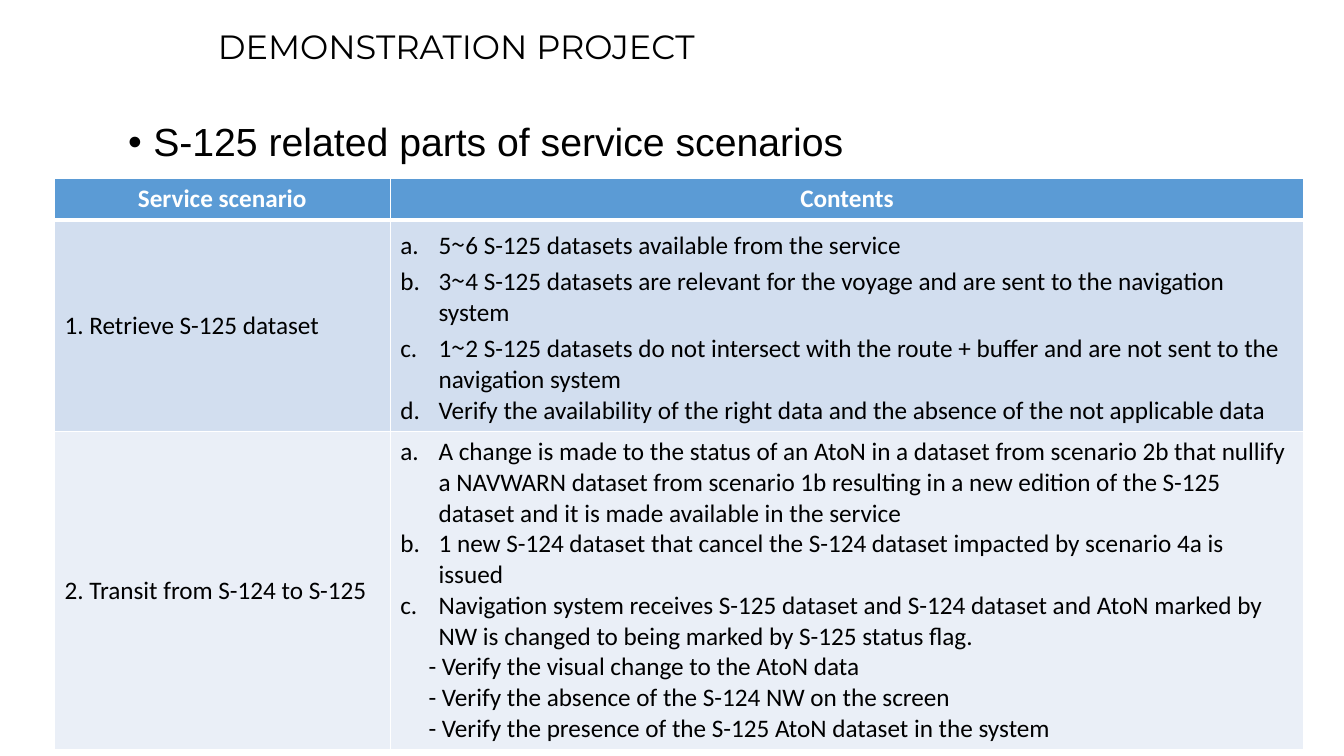
from dataclasses import dataclass

from lxml.etree import SubElement
from pptx import Presentation
from pptx.dml.color import RGBColor as RGB
from pptx.enum.text import MSO_ANCHOR as Anchor, MSO_AUTO_SIZE as Fit, PP_ALIGN as Align
from pptx.oxml.ns import qn
from pptx.util import Inches, Pt


@dataclass(frozen=True)
class Theme:
    black: str = "000000"
    white: str = "FFFFFF"
    head: str = "5B9BD5"
    bands: tuple = ("D2DEEF", "EAEFF7")
    title: int = 24
    lead: int = 28
    cell: int = 18
    title_font: str = "Montserrat"
    lead_font: str = "Arial"
    cell_font: str = "Calibri"
    tilde_font: str = "Noto Sans CJK KR"


THEME = Theme()
HEADS = ["Service scenario", "Contents"]
# Each scenario: name, lettered steps, checks
SCENARIOS = [
    ("1. Retrieve S-125 dataset", [
        "5~6 S-125 datasets available from the service",
        "3~4 S-125 datasets are relevant for the voyage and are sent to the navigation system",
        "1~2 S-125 datasets do not intersect with the route + buffer and are not sent to the "
        "navigation system",
        "Verify the availability of the right data and the absence of the not applicable data",
    ], []),
    ("2. Transit from S-124 to S-125", [
        "A change is made to the status of an AtoN in a dataset from scenario 2b that nullify "
        "a NAVWARN dataset from scenario 1b resulting in a new edition of the S-125 dataset "
        "and it is made available in the service",
        "1 new S-124 dataset that cancel the S-124 dataset impacted by scenario 4a is issued",
        "Navigation system receives S-125 dataset and S-124 dataset and AtoN marked by NW is "
        "changed to being marked by S-125 status flag.",
    ], [
        "- Verify the visual change to the AtoN data",
        "- Verify the absence of the S-124 NW on the screen",
        "- Verify the presence of the S-125 AtoN dataset in the system",
    ]),
]


def style(run, font, size, color, bold=False):
    run.font.name = font
    run.font.size = Pt(size)
    run.font.bold = bold
    run.font.color.rgb = RGB.from_string(color)


def indent(para, left, first=0):
    props = para._p.get_or_add_pPr()
    props.set("marL", str(Inches(left)))
    props.set("indent", str(Inches(first)))
    return props


def place(holder, left, top, width, height, text, font, size):
    """Move a placeholder and give it one formatted line."""
    holder.left, holder.top = Inches(left), Inches(top)
    holder.width, holder.height = Inches(width), Inches(height)
    frame = holder.text_frame
    frame.text = text
    frame.word_wrap = True
    frame.auto_size = Fit.NONE
    para = frame.paragraphs[0]
    para.alignment = Align.LEFT
    para.line_spacing = 0.9
    para.space_before = Pt(0)
    style(para.runs[0], font, size, THEME.black)
    return frame


def border(cell, **widths):
    """Draw white cell edges; keys are L, R, T and B, widths in points."""
    props = cell._tc.get_or_add_tcPr()
    for side in "LRTB":
        line = SubElement(props, qn(f"a:ln{side}"), w=str(Pt(widths.get(side, 1))))
        fill = SubElement(line, qn("a:solidFill"))
        SubElement(fill, qn("a:srgbClr"), val=THEME.white)


def paint(cell, color, **widths):
    border(cell, **widths)
    cell.fill.solid()
    cell.fill.fore_color.rgb = RGB.from_string(color)
    cell.vertical_anchor = Anchor.MIDDLE


def label(cell, text, color, bold=False, align=Align.LEFT):
    cell.text_frame.text = text
    para = cell.text_frame.paragraphs[0]
    para.alignment = align
    style(para.runs[0], THEME.cell_font, THEME.cell, color, bold)


def fill_steps(cell, steps, checks):
    frame = cell.text_frame
    for i, text in enumerate(steps + checks):
        para = frame.add_paragraph() if i else frame.paragraphs[0]
        if i < len(steps):
            props = indent(para, 0.38, -0.38)
            SubElement(props, qn("a:buFont"), typeface="+mj-lt")
            SubElement(props, qn("a:buAutoNum"), type="alphaLcPeriod")
        else:
            indent(para, 0.28)
        for part in filter(None, text.partition("~")):
            run = para.add_run()
            run.text = part
            font = THEME.tilde_font if part == "~" else THEME.cell_font
            style(run, font, THEME.cell, THEME.black)


def add_scenarios(slide):
    widths, heights = (3.33, 9.06), (0.41, 2.09, 3.15)
    table = slide.shapes.add_table(
        len(heights), len(widths), Inches(0.54), Inches(1.77),
        Inches(sum(widths)), Inches(sum(heights))).table
    for col, width in zip(table.columns, widths):
        col.width = Inches(width)
    for row, height in zip(table.rows, heights):
        row.height = Inches(height)
    for i, head in enumerate(HEADS):
        cell = table.cell(0, i)
        paint(cell, THEME.head, B=3)
        label(cell, head, THEME.white, True, Align.CENTER)
    for i, (name, steps, checks) in enumerate(SCENARIOS, 1):
        for j in range(len(HEADS)):
            paint(table.cell(i, j), THEME.bands[i - 1], T=3 if i == 1 else 1)
        label(table.cell(i, 0), name, THEME.black)
        fill_steps(table.cell(i, 1), steps, checks)


def main():
    deck = Presentation()
    deck.slide_width, deck.slide_height = Inches(13.33), Inches(7.5)
    slide = deck.slides.add_slide(deck.slide_layouts[1])
    title = place(slide.shapes.title, 2.06, 0, 11.28, 0.97,
                  "DEMONSTRATION PROJECT", THEME.title_font, THEME.title)
    title.vertical_anchor = Anchor.MIDDLE
    lead = place(slide.placeholders[1], 1.17, 1.17, 11.5, 5.58,
                 "S-125 related parts of service scenarios", THEME.lead_font, THEME.lead)
    props = indent(lead.paragraphs[0], 0.25, -0.25)
    SubElement(props, qn("a:buFont"), typeface=THEME.lead_font)
    SubElement(props, qn("a:buChar"), char="•")
    add_scenarios(slide)
    deck.save("out.pptx")


if __name__ == "__main__":
    main()
